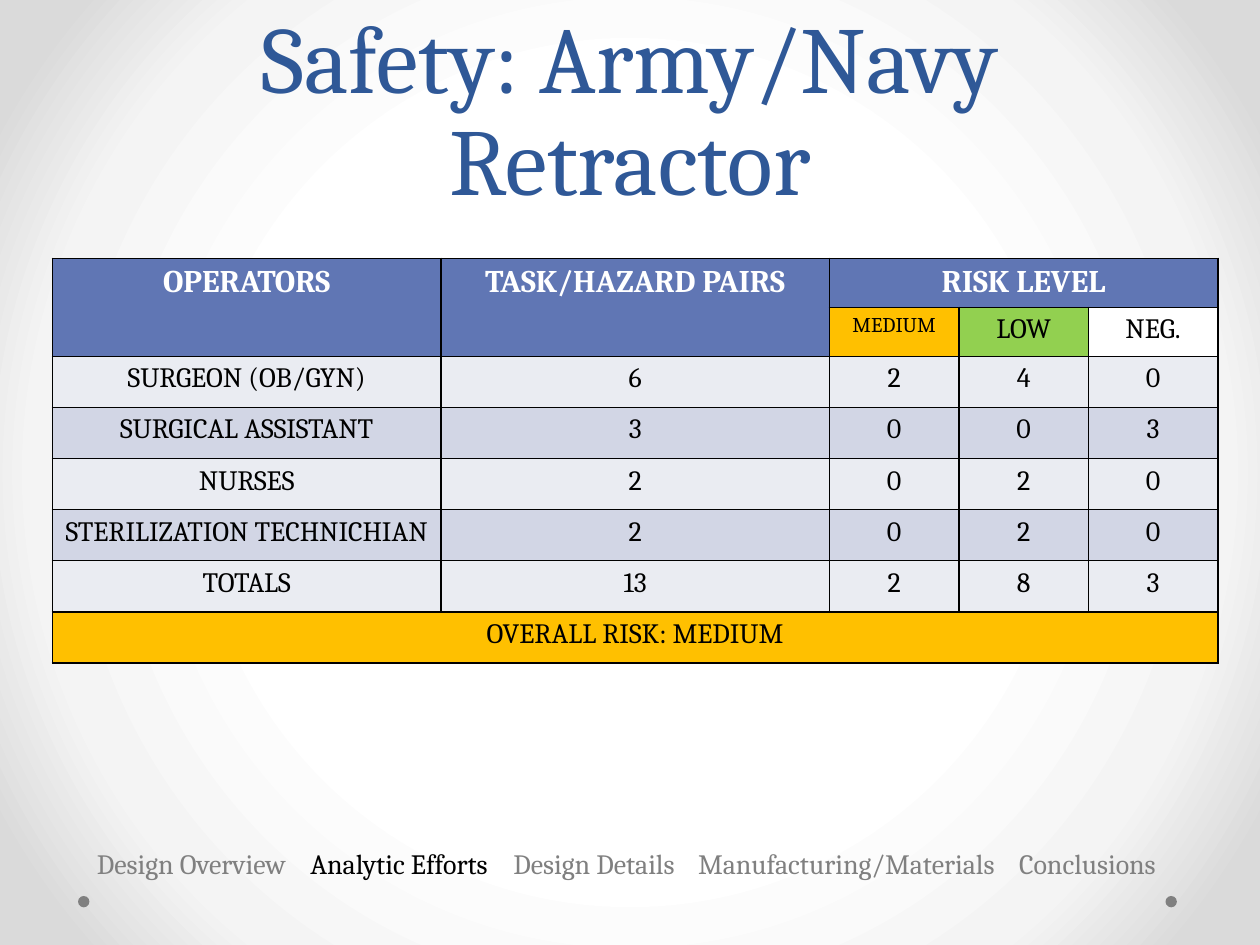
import pptx
import pptx.dml.color
import pptx.enum.shapes
import pptx.enum.text
import pptx.oxml
import pptx.util
import lxml.etree

Pt = pptx.util.Pt
RGBColor = pptx.dml.color.RGBColor
Align = pptx.enum.text.PP_ALIGN
Anchor = pptx.enum.text.MSO_ANCHOR
FONT = "Cambria"
DRAWING = "http://schemas.openxmlformats.org/drawingml/2006/main"
PRESENTATION = "http://schemas.openxmlformats.org/presentationml/2006/main"

COLORS = {
    "title": "2F5897", "header": "6076B4", "medium": "FFC000", "low": "92D050",
    "white": "FFFFFF", "black": "000000", "gray": "808080",
    "band_light": "EAECF2", "band_dark": "D2D6E5",
}
BACKGROUND_STOPS = [(50, "FFFFFF"), (76, "F4F4F4"), (92, "DADADA")]

TITLE = "Safety: Army/Navy Retractor"
HEADERS = ["OPERATORS", "TASK/HAZARD PAIRS", "RISK LEVEL"]
RISK_LEVELS = [("MEDIUM", "medium", 12), ("LOW", "low", 16), ("NEG.", "white", 16)]
OPERATORS = [
    ("SURGEON (OB/GYN)", 6, 2, 4, 0),
    ("SURGICAL ASSISTANT", 3, 0, 0, 3),
    ("NURSES", 2, 0, 2, 0),
    ("STERILIZATION TECHNICHIAN", 2, 0, 2, 0),
    ("TOTALS", 13, 2, 8, 3),
]
OVERALL = "OVERALL RISK: MEDIUM"
SECTIONS = ["Design Overview", "Analytic Efforts", "Design Details",
            "Manufacturing/Materials", "Conclusions"]
CURRENT_SECTION = "Analytic Efforts"
SECTION_TABS = [122, 238, 343.5, 527]

COLUMN_WIDTHS = [222, 222, 74, 74, 74]
ROW_HEIGHTS = [28, 28] + [29.2] * 6
MERGES = [(0, 0, 1, 0), (0, 1, 1, 1), (0, 2, 0, 4), (7, 0, 7, 4)]


def set_format(target, values):
    for name, value in values.items():
        setattr(target, name, value)


def format_font(font, size, color, bold=False):
    set_format(font, {"name": FONT, "size": Pt(size), "bold": bold})
    font.color.rgb = RGBColor.from_string(COLORS[color])


def paint_background(slide):
    """Give the slide a radial gradient that darkens towards the edges."""
    stops = "".join(
        f'<a:gs pos="{position * 1000}"><a:srgbClr val="{color}"/></a:gs>'
        for position, color in BACKGROUND_STOPS)
    background = pptx.oxml.parse_xml(
        f'<p:bg xmlns:p="{PRESENTATION}" xmlns:a="{DRAWING}"><p:bgPr>'
        f'<a:gradFill rotWithShape="1"><a:gsLst>{stops}</a:gsLst><a:path path="circle">'
        '<a:fillToRect l="50000" t="50000" r="50000" b="50000"/></a:path></a:gradFill>'
        '<a:effectLst/></p:bgPr></p:bg>')
    slide.element.cSld.insert(0, background)


def add_dots(slide):
    for left in (44.6, 666):
        dot = slide.shapes.add_shape(
            pptx.enum.shapes.MSO_SHAPE.OVAL, Pt(left), Pt(512), Pt(6.5), Pt(6.5))
        dot.shadow.inherit = False
        dot.fill.solid()
        dot.fill.fore_color.rgb = RGBColor.from_string(COLORS["gray"])
        dot.line.fill.background()


def add_title(slide):
    title = slide.shapes.title
    set_format(title, {"left": Pt(36), "top": Pt(0), "width": Pt(648), "height": Pt(126)})
    frame = title.text_frame
    frame.text = TITLE
    set_format(frame, {"vertical_anchor": Anchor.BOTTOM, "word_wrap": True,
                       "auto_size": pptx.enum.text.MSO_AUTO_SIZE.NONE})
    paragraph = frame.paragraphs[0]
    set_format(paragraph, {"alignment": Align.CENTER, "line_spacing": Pt(58)})
    format_font(paragraph.runs[0].font, 54, "title")


def add_borders(cell):
    properties = cell._tc.get_or_add_tcPr()
    for side in ("lnL", "lnR", "lnT", "lnB"):
        properties.append(pptx.oxml.parse_xml(
            f'<a:{side} xmlns:a="{DRAWING}" w="12700"><a:solidFill>'
            f'<a:srgbClr val="{COLORS["black"]}"/></a:solidFill></a:{side}>'))


def fill_cell(cell, text, fill, size=16, color="black", bold=False):
    cell.fill.solid()
    cell.fill.fore_color.rgb = RGBColor.from_string(COLORS[fill])
    cell.text = str(text)
    paragraph = cell.text_frame.paragraphs[0]
    paragraph.alignment = Align.CENTER
    for run in paragraph.runs:
        format_font(run.font, size, color, bold)


def add_risk_table(slide):
    table = slide.shapes.add_table(
        len(ROW_HEIGHTS), len(COLUMN_WIDTHS), Pt(30), Pt(147.6),
        Pt(sum(COLUMN_WIDTHS)), Pt(sum(ROW_HEIGHTS))).table
    set_format(table, {"first_row": False, "horz_banding": False})
    for column, width in zip(table.columns, COLUMN_WIDTHS):
        column.width = Pt(width)
    for row, height in zip(table.rows, ROW_HEIGHTS):
        row.height = Pt(height)
    for cell in table.iter_cells():
        add_borders(cell)
    for top, left, bottom, right in MERGES:
        table.cell(top, left).merge(table.cell(bottom, right))

    for column, text in enumerate(HEADERS):
        fill_cell(table.cell(0, column), text, "header", 18, "white", True)
    for column, (text, fill, size) in enumerate(RISK_LEVELS, start=2):
        fill_cell(table.cell(1, column), text, fill, size)
    for row, values in enumerate(OPERATORS, start=2):
        band = "band_dark" if row % 2 else "band_light"
        for column, value in enumerate(values):
            fill_cell(table.cell(row, column), value, band)
    fill_cell(table.cell(len(ROW_HEIGHTS) - 1, 0), OVERALL, "medium")


def add_section_bar(slide):
    """List the sections on tab stops, with the current one in black."""
    frame = slide.shapes.add_textbox(Pt(13), Pt(480.2), Pt(690), Pt(26.6)).text_frame
    set_format(frame, {"word_wrap": True, "margin_left": Pt(42.4), "margin_right": Pt(0)})
    paragraph = frame.paragraphs[0]
    paragraph.alignment = Align.LEFT
    tab_list = lxml.etree.SubElement(
        paragraph._p.get_or_add_pPr(), f"{{{DRAWING}}}tabLst")
    for position in SECTION_TABS:
        lxml.etree.SubElement(
            tab_list, f"{{{DRAWING}}}tab", pos=str(int(Pt(position))), algn="l")
    for index, section in enumerate(SECTIONS):
        run = paragraph.add_run()
        run.text = "\t" + section if index else section
        format_font(run.font, 16, "black" if section == CURRENT_SECTION else "gray")


def main():
    presentation = pptx.Presentation()
    set_format(presentation, {"slide_width": Pt(720), "slide_height": Pt(540)})
    slide = presentation.slides.add_slide(presentation.slide_layouts[5])
    paint_background(slide)
    add_dots(slide)
    add_title(slide)
    add_risk_table(slide)
    add_section_bar(slide)
    presentation.save("out.pptx")


if __name__ == "__main__":
    main()
